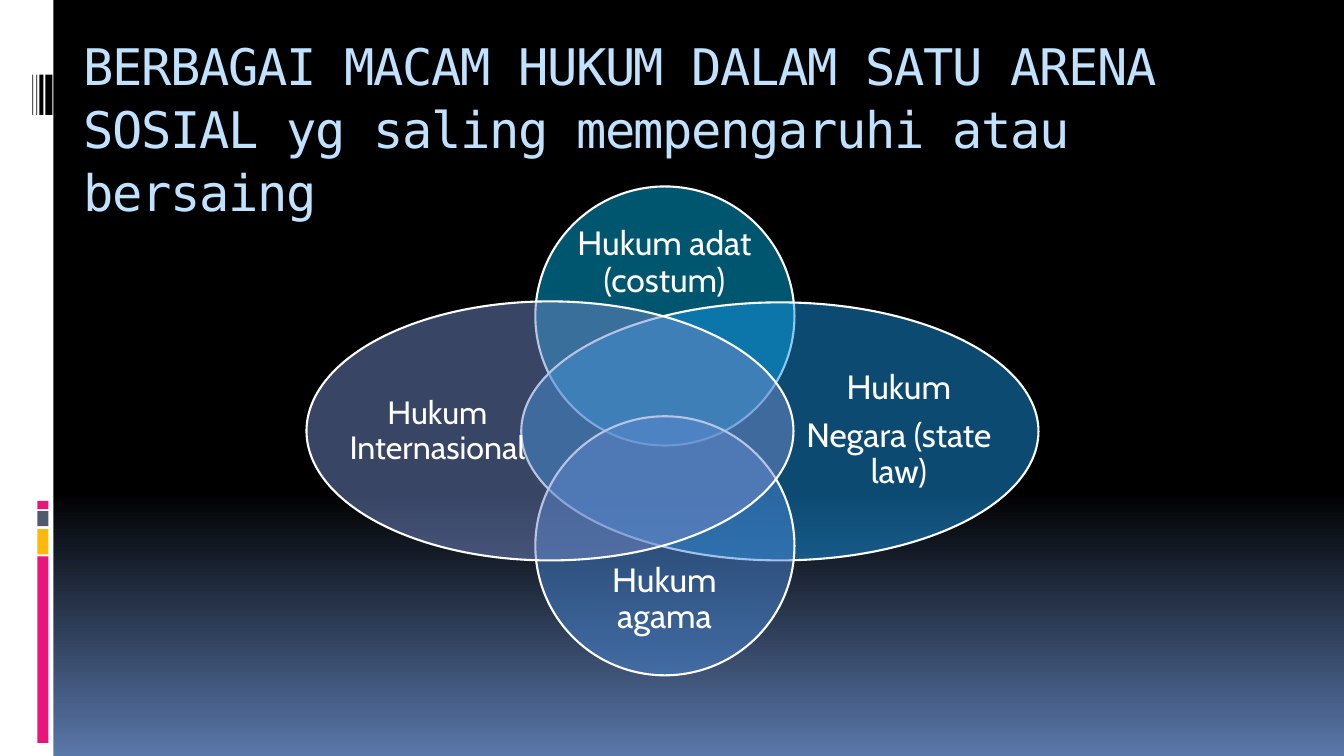
from copy import deepcopy
from lxml.etree import SubElement
from pptx import Presentation
from pptx.dml.color import RGBColor as Rgb
from pptx.enum.shapes import MSO_SHAPE as Kind
from pptx.enum.text import MSO_ANCHOR as Anchor, PP_ALIGN as Align
from pptx.oxml.ns import qn
from pptx.util import Pt

PX = 9144  # EMU per px, 100 px to the inch
THEME = {
    "white": "FFFFFF", "black": "000000", "glow": "5A77A9", "title": "C1E2FF",
    "pink": "EA157A", "gold": "FEB80A", "slate": "4E5B6F",
    "adat": "00ADDC", "state": "1895E4", "faith": "4786D4", "world": "738AC8",
    "head": "DejaVu Sans Mono", "body": "Cabin",
    "big": 36, "mid": 24, "low": 23, "edge": 1.5,
}


def shape(kind, box, tint):
    item = slide.shapes.add_shape(kind, *[n * PX for n in box])
    item.shadow.inherit = False
    item.fill.solid()
    item.fill.fore_color.rgb = Rgb.from_string(THEME[tint])
    item.line.fill.background()
    return item


def write(box, lines, face, size, tint, frame, para):
    text = slide.shapes.add_textbox(*[n * PX for n in box]).text_frame
    text.text = "\n".join(lines)
    for key, val in frame.items():
        setattr(text, key, val)
    for part in text.paragraphs:
        for key, val in para.items():
            setattr(part, key, val)
        font = part.runs[0].font
        font.name, font.size = THEME[face], Pt(THEME[size])
        font.color.rgb = Rgb.from_string(THEME[tint])
    return text


deck = Presentation()
deck.slide_width, deck.slide_height = 1333 * PX, 750 * PX
slide = deck.slides.add_slide(deck.slide_layouts[6])

# Background: black down to 65 %, then fading to blue
fill = slide.background.fill
fill.gradient()
fill.gradient_angle = 270
first = next(slide._element.iter(qn("a:gs")))
first.addnext(deepcopy(first))
fade = [(0, "black"), (0.65, "black"), (1, "glow")]
for stop, (pos, tint) in zip(fill.gradient_stops, fade):
    stop.position = pos
    stop.color.rgb = Rgb.from_string(THEME[tint])

# Side band with colour blocks and bar code strips
shape(Kind.RECTANGLE, (0, 0, 53, 750), "white")
blocks = [(552, 185, "pink"), (525, 25, "gold"), (507, 15, "slate"), (497, 8, "pink")]
for top, high, tint in blocks:
    shape(Kind.RECTANGLE, (37, top, 11, high), tint)
for left, wide in [(45, 7), (39, 4), (36, 1), (32, 1)]:
    shape(Kind.RECTANGLE, (left, 74, wide, 40), "black")

# Four overlapping ovals, each with its label
ovals = [
    ((531, 185, 257, 257), "adat", (560, 220, 198, 82), ["Hukum adat (costum)"], "mid"),
    ((517, 300, 513, 256), "state", (793, 329, 197, 197), ["Hukum", "Negara (state law)"], "mid"),
    ((531, 413, 257, 257), "faith", (560, 554, 198, 82), ["Hukum agama"], "mid"),
    ((304, 299, 483, 257), "world", (341, 329, 186, 198), ["Hukum Internasional"], "low"),
]
sides = ("left", "top", "right", "bottom")
inner = {f"margin_{side}": 0 for side in sides}
inner |= {"word_wrap": True, "vertical_anchor": Anchor.MIDDLE}
for box, tint, area, lines, size in ovals:
    oval = shape(Kind.OVAL, box, tint)
    tone = next(oval._element.spPr.iter(qn("a:srgbClr")))
    SubElement(tone, qn("a:alpha"), val="50000")
    oval.line.color.rgb = Rgb.from_string(THEME["white"])
    oval.line.width = Pt(THEME["edge"])
    para = {"alignment": Align.CENTER, "line_spacing": 0.9,
            "space_after": Pt(THEME[size] * 0.35)}
    write(area, lines, "body", size, "white", inner, para)

# Title
words = "BERBAGAI MACAM HUKUM DALAM SATU ARENA SOSIAL yg saling mempengaruhi atau bersaing"
frame = {"word_wrap": True, "vertical_anchor": Anchor.TOP, "margin_left": 16 * PX}
title = write((67, 28, 1200, 125), [words], "head", "big", "title", frame,
              {"line_spacing": 1.04})
title.paragraphs[0].runs[0].font._element.set("spc", "-100")

deck.save("out.pptx")
